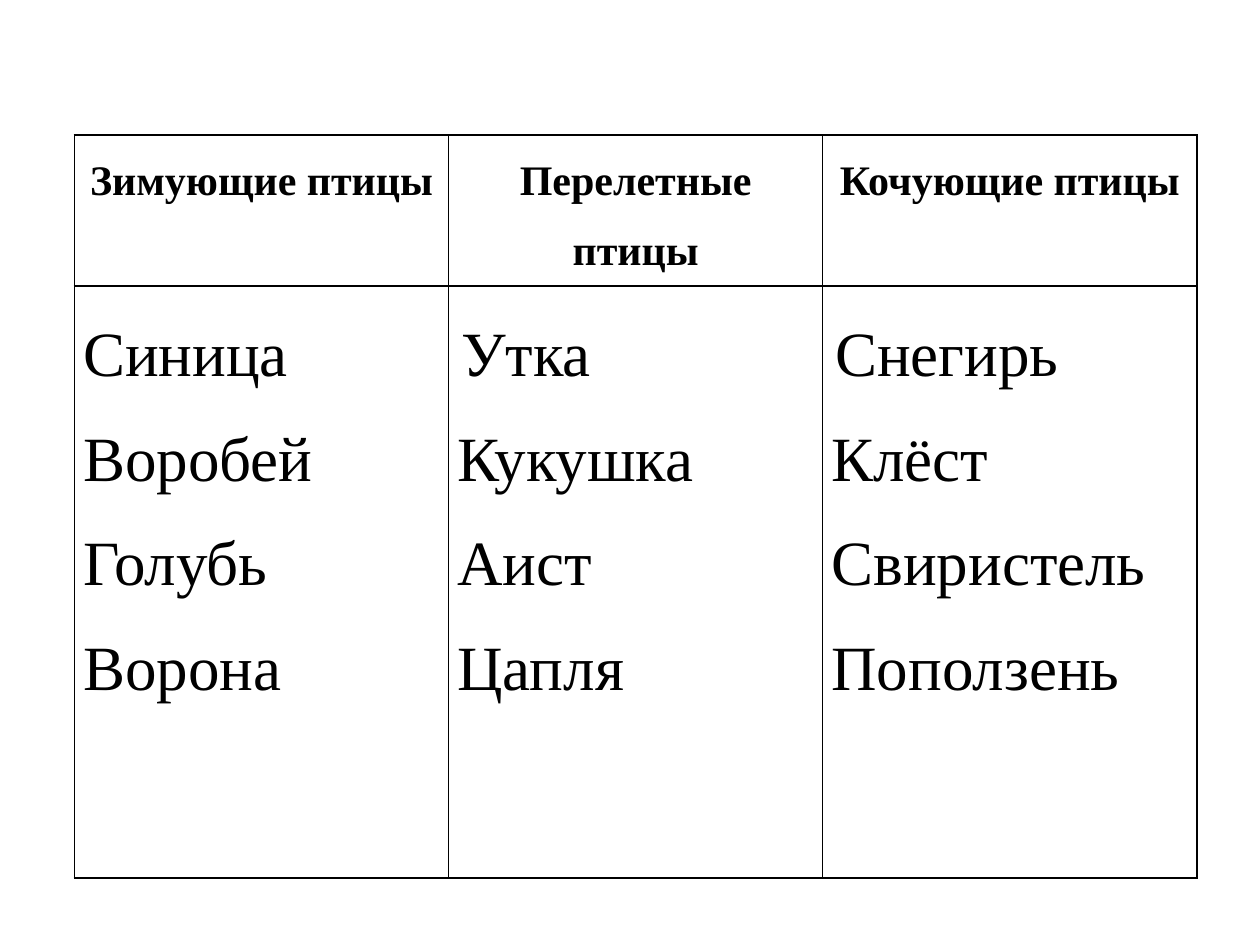
from lxml.etree import SubElement
from pptx import Presentation
from pptx.dml.color import RGBColor
from pptx.enum.text import PP_ALIGN
from pptx.oxml.ns import qn
from pptx.util import Inches, Pt

BLACK = "000000"
BIRDS = {
    "Зимующие птицы": ["Синица", "Воробей", "Голубь", "Ворона"],
    "Перелетные птицы": ["Утка", "Кукушка", "Аист", "Цапля"],
    "Кочующие птицы": ["Снегирь", "Клёст", "Свиристель", "Поползень"],
}
INDENTED = ("Утка", "Снегирь")


def add_borders(cell, color, width):
    properties = cell._tc.get_or_add_tcPr()
    for side in ("lnL", "lnR", "lnT", "lnB"):
        line = SubElement(properties, qn(f"a:{side}"), w=str(Pt(width)))
        fill = SubElement(line, qn("a:solidFill"))
        SubElement(fill, qn("a:srgbClr"), val=color)


def fill_cell(cell, lines, size, bold, alignment):
    """Write one paragraph per line and format the cell."""
    add_borders(cell, BLACK, 1)
    cell.fill.background()
    cell.margin_left = cell.margin_right = Inches(0.07)
    cell.margin_top = cell.margin_bottom = 0
    cell.text_frame.text = "\n".join(lines)
    for paragraph in cell.text_frame.paragraphs:
        paragraph.alignment = alignment
        paragraph.line_spacing = 1.5
        if paragraph.text in INDENTED:
            paragraph._p.get_or_add_pPr().set("indent", str(Inches(0.03)))
        for run in paragraph.runs:
            run.font.name = "Times New Roman"
            run.font.size = Pt(size)
            run.font.bold = bold
            run.font.color.rgb = RGBColor.from_string(BLACK)


presentation = Presentation()
presentation.slide_width = Inches(10)
presentation.slide_height = Inches(7.5)
slide = presentation.slides.add_slide(presentation.slide_layouts[6])

table = slide.shapes.add_table(
    2, len(BIRDS), Inches(0.59), Inches(1.07), Inches(8.9), Inches(5.9)
).table
table.first_row = False
table.horz_banding = False
table.rows[0].height = Inches(1.2)
table.rows[1].height = Inches(4.7)

for index, (group, birds) in enumerate(BIRDS.items()):
    table.columns[index].width = Inches(2.97)
    fill_cell(table.cell(0, index), [group], 24, True, PP_ALIGN.CENTER)
    fill_cell(table.cell(1, index), birds, 36, False, PP_ALIGN.LEFT)

presentation.save("out.pptx")
